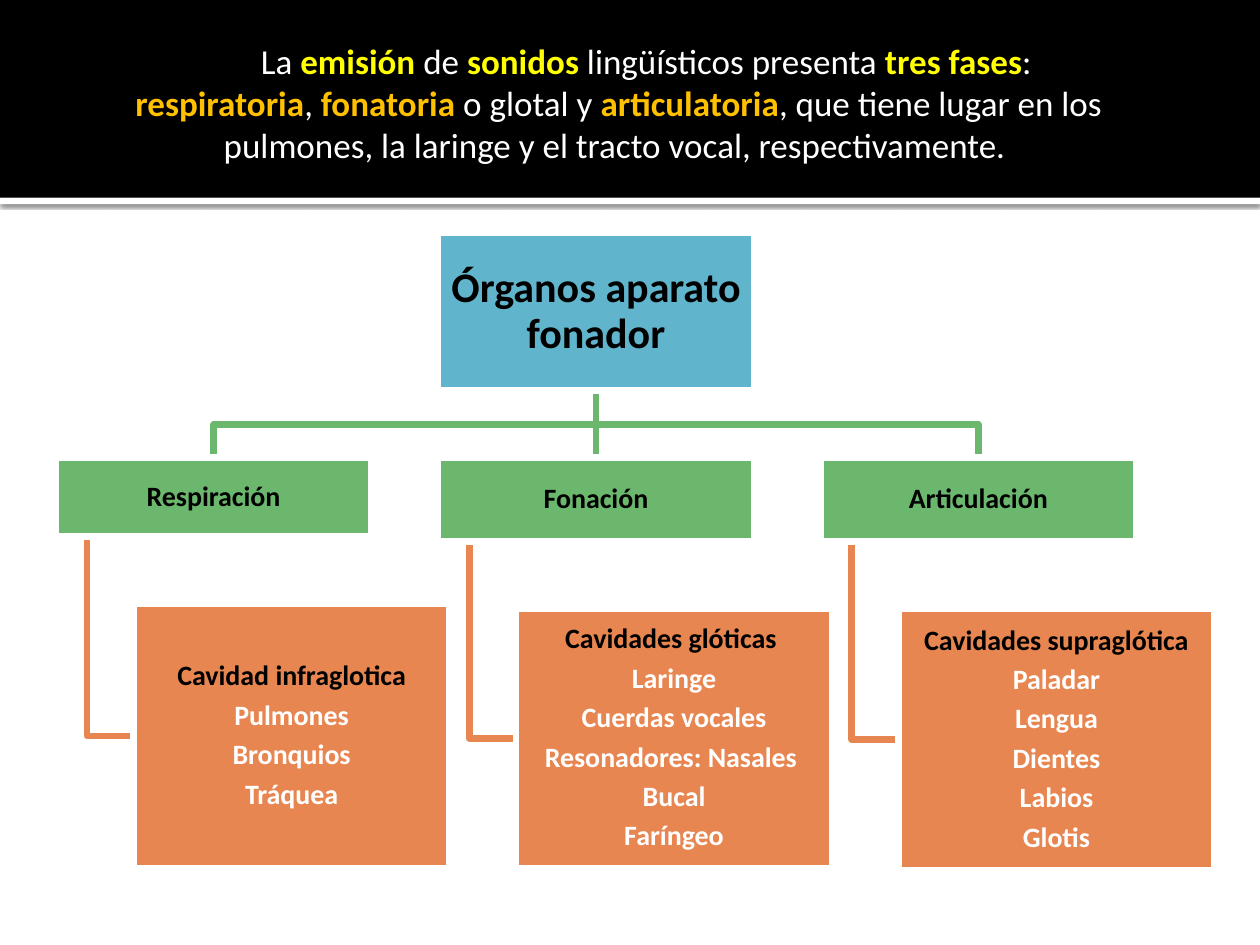
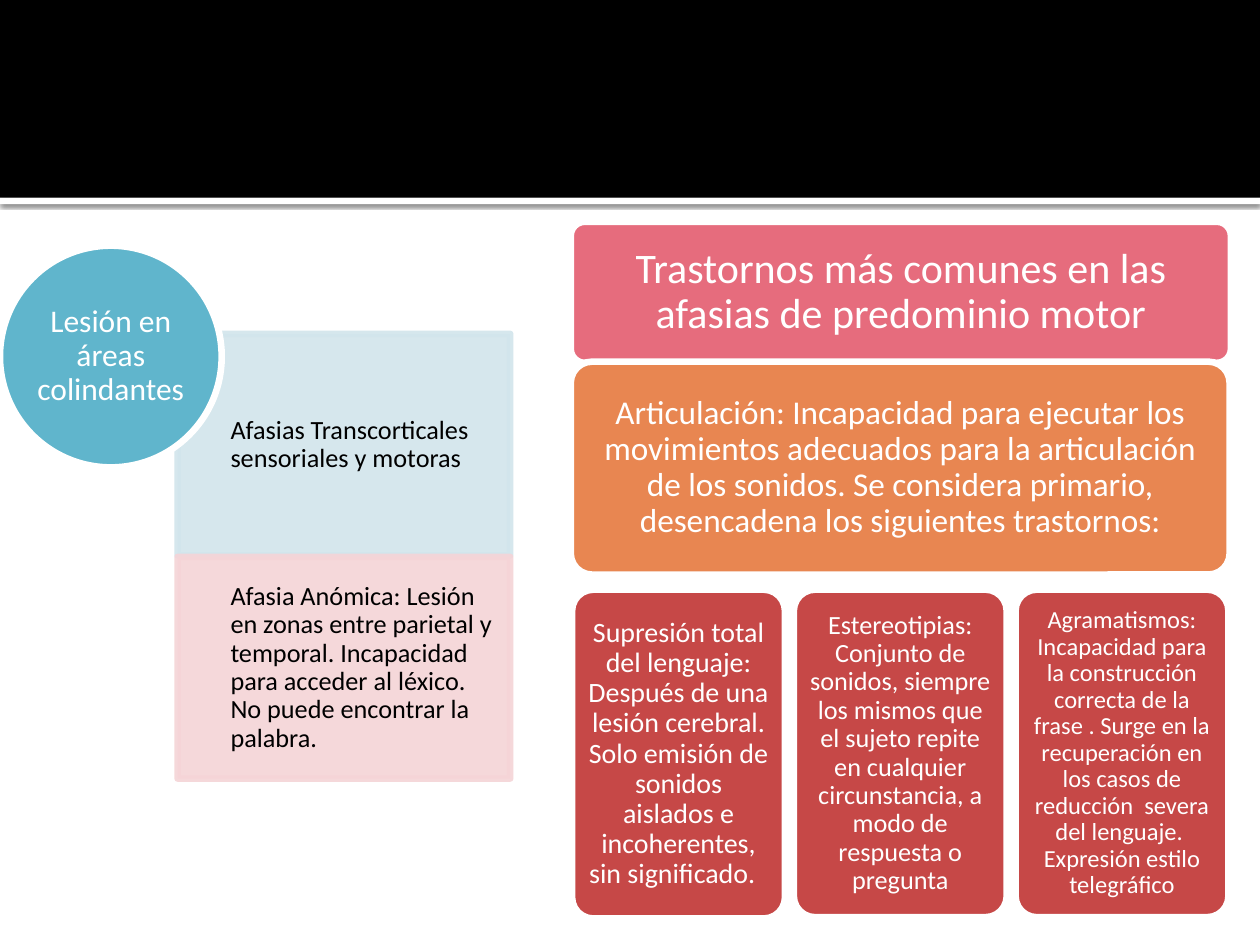
from dataclasses import dataclass
from typing import NamedTuple

from lxml import etree
from pptx import Presentation
from pptx.dml import color as dml
from pptx.enum import shapes, text
from pptx.oxml import ns
from pptx.util import Inches, Pt

BLACK, WHITE, YELLOW, GOLD = "000000", "FFFFFF", "FFFF00", "FFC000"
BLUE, GREEN, ORANGE, PINK, RED = "60B5CC", "6BB76D", "E88651", "E66C7D", "C64847"
PALE_BLUE, PALE_PINK = "D2E5EC", "F5D4D7"
FONT = "Calibri"
OUTLINE = 3.78
RECT = shapes.MSO_SHAPE.RECTANGLE
ROUNDED = shapes.MSO_SHAPE.ROUNDED_RECTANGLE
OVAL = shapes.MSO_SHAPE.OVAL
CENTER, LEFT = text.PP_ALIGN.CENTER, text.PP_ALIGN.LEFT


class Run(NamedTuple):
    text: str
    color: str = WHITE
    bold: bool = False


Paragraphs = list[list[Run]]


@dataclass
class Box:
    left: float
    top: float
    width: float
    height: float
    fill: str
    size: float
    paragraphs: Paragraphs
    insets: tuple[float, float, float, float] = (0.01,) * 4
    kind: shapes.MSO_SHAPE = RECT
    line: str = WHITE
    align: text.PP_ALIGN = CENTER
    opacity: int = 100


class Branch(NamedTuple):
    name: str
    height: float
    leaf_top: float
    leaf_height: float
    cavity: str
    organs: list[str]


class Disorder(NamedTuple):
    size: float
    height: float
    inset: float
    text: str


TITLE: Paragraphs = [
    [
        Run("\t", YELLOW),
        Run("La "),
        Run("emisión", YELLOW, True),
        Run(" de"),
        Run(" sonidos ", YELLOW, True),
        Run("lingüísticos presenta "),
        Run("tres fases", YELLOW, True),
        Run(": "),
    ],
    [
        Run("respiratoria", GOLD, True),
        Run(", "),
        Run("fonatoria", GOLD, True),
        Run(" o glotal y "),
        Run("articulatoria", GOLD, True),
        Run(", que tiene lugar en los pulmones, la laringe y el tracto vocal, respectivamente. "),
    ],
]

BRANCHES = [
    Branch("Respiración", 0.63, 4.79, 2.1, "Cavidad infraglotica",
           ["Pulmones", "Bronquios", "Tráquea"]),
    Branch("Fonación", 0.67, 4.83, 2.06, "Cavidades glóticas ",
           ["Laringe", "Cuerdas vocales", "Resonadores: Nasales ", "Bucal", "Faríngeo"]),
    Branch("Articulación", 0.67, 4.83, 2.08, "Cavidades supraglótica",
           ["Paladar", "Lengua", "Dientes", "Labios", "Glotis"]),
]

APHASIAS = [
    (PALE_BLUE, "Afasias Transcorticales sensoriales y motoras"),
    (PALE_PINK, "Afasia Anómica: Lesión en zonas entre parietal y temporal. Incapacidad "
                "para acceder al léxico. No puede encontrar la palabra."),
]

DISORDERS = [
    Disorder(16, 2.61, 0.07,
             "Supresión total del lenguaje: Después de una lesión cerebral. Solo emisión "
             "de sonidos aislados e incoherentes, sin significado.  "),
    Disorder(15, 2.6, 0.06,
             "Estereotipias: Conjunto de sonidos, siempre los mismos que el sujeto repite "
             "en cualquier circunstancia, a modo de respuesta o pregunta"),
    Disorder(14, 2.6, 0.06,
             "Agramatismos: Incapacidad para la construcción correcta de la frase . Surge "
             "en la recuperación en los casos de reducción  severa del lenguaje.  "
             "Expresión estilo telegráfico"),
]


def rgb(value: str) -> dml.RGBColor:
    return dml.RGBColor.from_string(value)


def add_child(parent, tag: str, **attributes):
    child = etree.SubElement(parent, ns.qn(tag))
    for name, value in attributes.items():
        child.set(name, str(value))
    return child


def set_opacity(shape, percent: int) -> None:
    for color in shape._element.spPr.iter(ns.qn("a:srgbClr")):
        add_child(color, "a:alpha", val=percent * 1000)


def write(frame, paragraphs: Paragraphs, size: float, insets, align=CENTER,
          line_spacing: float = 0.9, after: float = 0.33) -> None:
    frame.word_wrap = True
    frame.margin_left, frame.margin_top, frame.margin_right, frame.margin_bottom = map(Inches, insets)
    for index, runs in enumerate(paragraphs):
        paragraph = frame.add_paragraph() if index else frame.paragraphs[0]
        paragraph.alignment = align
        paragraph.line_spacing = line_spacing
        paragraph.space_after = Pt(after * size)
        for item in runs:
            run = paragraph.add_run()
            run.text = item.text
            run.font.name = FONT
            run.font.size = Pt(size)
            run.font.bold = item.bold
            run.font.color.rgb = rgb(item.color)


def add_plain(slide, kind, left, top, width, height, fill: str):
    shape = slide.shapes.add_shape(kind, *map(Inches, (left, top, width, height)))
    shape.shadow.inherit = False
    shape.fill.solid()
    shape.fill.fore_color.rgb = rgb(fill)
    shape.line.fill.background()
    return shape


def add_box(slide, box: Box) -> None:
    shape = add_plain(slide, box.kind, box.left, box.top, box.width, box.height, box.fill)
    if box.kind == ROUNDED:
        shape.adjustments[0] = 0.1
    shape.line.color.rgb = rgb(box.line)
    shape.line.width = Pt(OUTLINE)
    if box.opacity < 100:
        set_opacity(shape, box.opacity)
    shape.text_frame.vertical_anchor = text.MSO_ANCHOR.MIDDLE
    write(shape.text_frame, box.paragraphs, box.size, box.insets, box.align)


def add_elbow(slide, points: list[tuple[float, float]], color: str) -> None:
    corners = [(Inches(x), Inches(y)) for x, y in points]
    builder = slide.shapes.build_freeform(*corners[0])
    builder.add_line_segments(corners[1:], close=False)
    shape = builder.convert_to_shape()
    shape.shadow.inherit = False
    shape.fill.background()
    shape.line.color.rgb = rgb(color)
    shape.line.width = Pt(OUTLINE)


def add_stem(slide, x: float, top: float, bottom: float, color: str) -> None:
    connector = slide.shapes.add_connector(
        shapes.MSO_CONNECTOR.STRAIGHT, *map(Inches, (x, top, x, bottom)))
    connector.line.color.rgb = rgb(color)
    connector.line.width = Pt(OUTLINE)
    add_child(connector._element.spPr, "a:effectLst")


def add_banded_slide(presentation):
    slide = presentation.slides.add_slide(presentation.slide_layouts[6])
    strip = add_plain(slide, RECT, 0, 1.57, 10, 0.05, WHITE)
    effects = strip._element.spPr.find(ns.qn("a:effectLst"))
    shadow = add_child(effects, "a:outerShdw", blurRad=Pt(2.5), dist=Pt(0.8),
                       dir=90 * 60000, algn="tl", rotWithShape=0)
    add_child(add_child(shadow, "a:srgbClr", val=BLACK), "a:alpha", val=60000)
    add_plain(slide, RECT, 0, 0, 10, 1.57, BLACK)
    return slide


def build_organs(presentation) -> None:
    slide = add_banded_slide(presentation)
    title = slide.shapes.add_textbox(*map(Inches, (0.43, 0.21, 9, 6.26)))
    write(title.text_frame, TITLE, 20, (0.06, 0.1, 0.1, 0.05), line_spacing=1, after=0)

    first_left, step, width = 0.44, 3.035, 2.51
    branch_top, root_bottom, fork = 3.63, 3.11, 3.37
    root_left = first_left + step
    trunk = root_left + width / 2
    boxes = [Box(root_left, 1.85, width, 1.25, BLUE, 24,
                 [[Run("Órganos aparato fonador", BLACK, True)]], (0.02,) * 4)]
    for index, branch in enumerate(BRANCHES):
        left = first_left + index * step
        middle, leg, leaf_left = left + width / 2, left + 0.25, left + 0.62
        leaf_middle = branch.leaf_top + branch.leaf_height / 2
        add_elbow(slide, [(leg, branch_top + branch.height), (leg, leaf_middle),
                          (leaf_left, leaf_middle)], ORANGE)
        if index == 1:
            add_stem(slide, trunk, root_bottom, branch_top, GREEN)
        else:
            add_elbow(slide, [(trunk, root_bottom), (trunk, fork), (middle, fork),
                              (middle, branch_top)], GREEN)
        cavity = [[Run(branch.cavity, BLACK, True)]]
        organs = [[Run(organ, WHITE, True)] for organ in branch.organs]
        boxes += [
            Box(left, branch_top, width, branch.height, GREEN, 16,
                [[Run(branch.name, BLACK, True)]]),
            Box(leaf_left, branch.leaf_top, width, branch.leaf_height, ORANGE, 16,
                cavity + organs),
        ]
    for box in boxes:
        add_box(slide, box)


def build_aphasias(presentation) -> None:
    slide = add_banded_slide(presentation)
    boxes = [
        Box(1.41, 2.65 + index * 1.77, 2.64, 1.76, fill, 15, [[Run(label, BLACK)]],
            (0.42, 0.12, 0.12, 0.12), line=fill, align=LEFT, opacity=90)
        for index, (fill, label) in enumerate(APHASIAS)
    ]
    boxes += [
        Box(0, 1.95, 1.76, 1.76, BLUE, 18, [[Run("Lesión en áreas colindantes")]],
            (0,) * 4, OVAL),
        Box(4.53, 1.76, 5.24, 1.12, PINK, 24,
            [[Run("Trastornos más comunes en las afasias de predominio motor")]],
            (0.1,) * 4, ROUNDED),
        Box(4.53, 2.87, 5.23, 1.69, ORANGE, 19,
            [[Run("Articulación: Incapacidad para ejecutar los movimientos adecuados para la "
                  "articulación de los sonidos. Se considera primario, desencadena los "
                  "siguientes trastornos:")]],
            (0.08,) * 4, ROUNDED),
    ]
    boxes += [
        Box(4.54 + index * 1.76, 4.68, 1.69, disorder.height, RED, disorder.size,
            [[Run(disorder.text)]], (disorder.inset,) * 4, ROUNDED)
        for index, disorder in enumerate(DISORDERS)
    ]
    for box in boxes:
        add_box(slide, box)


def main() -> None:
    presentation = Presentation()
    presentation.slide_width = Inches(10)
    presentation.slide_height = Inches(7.5)
    build_organs(presentation)
    build_aphasias(presentation)
    presentation.save("out.pptx")


if __name__ == "__main__":
    main()
